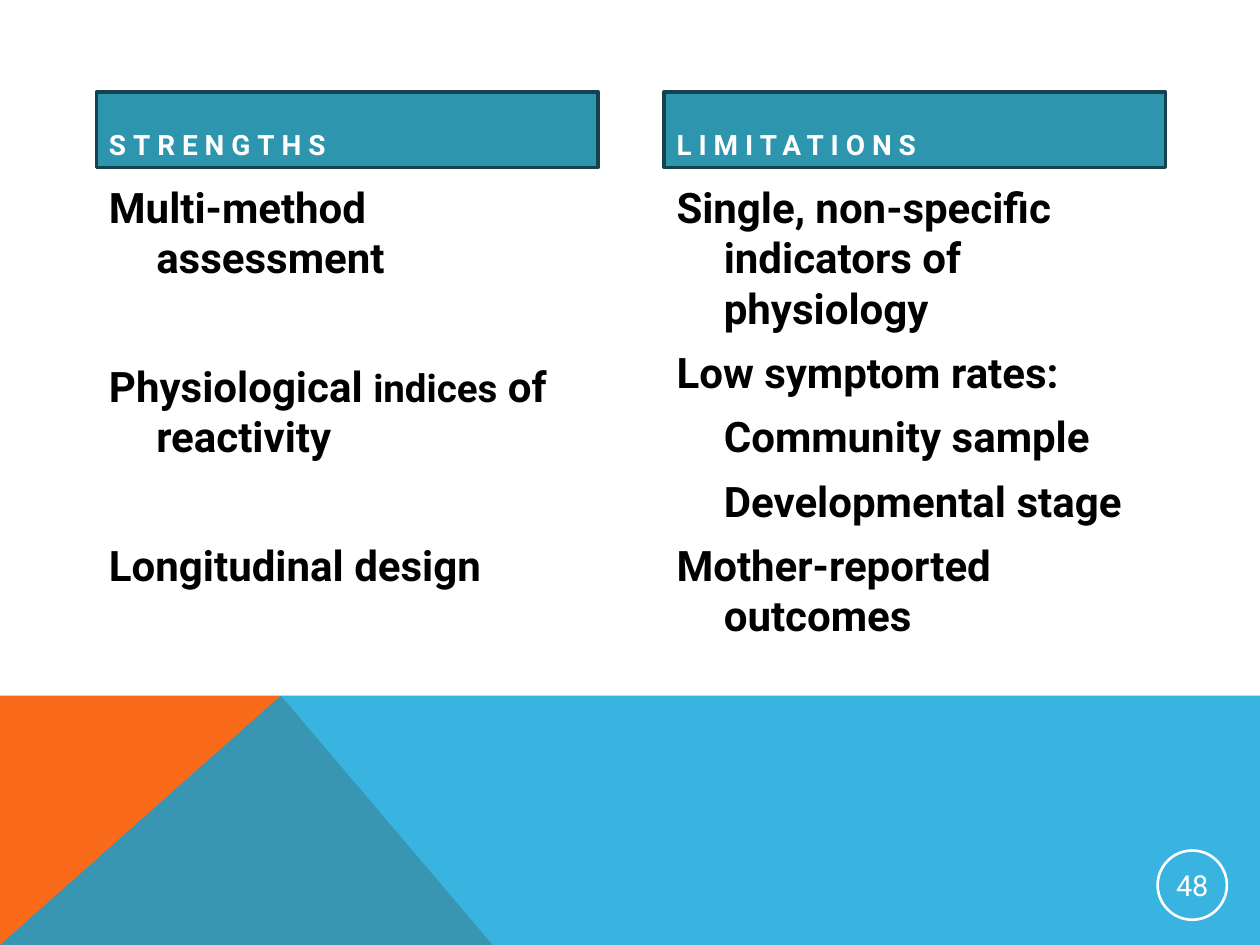
from pptx import Presentation
from pptx.dml import color
from pptx.enum import shapes, text
from pptx.oxml import ns
from pptx.util import Pt
from lxml import etree


def rgb(code):
    return color.RGBColor.from_string(code)


class Deck:
    font = "Roboto"
    white = "FFFFFF"
    black = "000000"
    indent = 27
    before = 8
    # Height of one blank line between two items, with its own spacing
    gap = 36.8

    def __init__(self, wide, high):
        self.prs = Presentation()
        self.prs.slide_width, self.prs.slide_height = Pt(wide), Pt(high)
        self.slide = self.prs.slides.add_slide(self.prs.slide_layouts[6])

    def style(self, para, size, tint, bold=False):
        font = para.font
        font.name, font.size, font.bold = self.font, Pt(size), bold
        font.color.rgb = rgb(tint)

    def area(self, points, fill, alpha=None):
        spots = [(Pt(x), Pt(y)) for x, y in points]
        build = self.slide.shapes.build_freeform(*spots[0], scale=1.0)
        build.add_line_segments(spots[1:], close=True)
        shape = build.convert_to_shape()
        shape.shadow.inherit = False
        shape.fill.solid()
        shape.fill.fore_color.rgb = rgb(fill)
        shape.line.fill.background()
        if alpha:
            tone = shape.fill._xPr.find(".//" + ns.qn("a:srgbClr"))
            etree.SubElement(tone, ns.qn("a:alpha")).set("val", str(alpha * 1000))

    def shape(self, kind, box, line, width, fill=None):
        shape = self.slide.shapes.add_shape(kind, *map(Pt, box))
        shape.shadow.inherit = False
        if fill:
            shape.fill.solid()
            shape.fill.fore_color.rgb = rgb(fill)
        else:
            shape.fill.background()
        shape.line.color.rgb = rgb(line)
        shape.line.width = Pt(width)
        return shape

    def header(self, box, title):
        shape = self.shape(shapes.MSO_SHAPE.RECTANGLE, box, "15424E", 2, "2D96AE")
        frame = shape.text_frame
        frame.vertical_anchor = text.MSO_ANCHOR.BOTTOM
        para = frame.paragraphs[0]
        para.alignment = text.PP_ALIGN.LEFT
        para.space_before = Pt(self.before)
        run = para.add_run()
        run.text = title
        run._r.get_or_add_rPr().set("spc", "400")
        self.style(para, 16, self.white, True)

    def items(self, box, rows):
        """Each row is (level, blank line above, list of (words, size))."""
        frame = self.slide.shapes.add_textbox(*map(Pt, box)).text_frame
        frame.word_wrap = True
        for i, (level, blank, runs) in enumerate(rows):
            para = frame.add_paragraph() if i else frame.paragraphs[0]
            para.space_before = Pt(self.before + blank * self.gap)
            props = para._p.get_or_add_pPr()
            props.set("marL", str(Pt(self.indent)))
            props.set("indent", str(Pt(self.indent * (level - 1))))
            self.style(para, 24, self.black, True)
            for words, size in runs:
                run = para.add_run()
                run.text = words
                if size:
                    run.font.size = Pt(size)

    def badge(self, box, label):
        shape = self.shape(shapes.MSO_SHAPE.OVAL, box, self.white, 1.5)
        frame = shape.text_frame
        frame.margin_left = frame.margin_right = Pt(1)
        frame.margin_top = frame.margin_bottom = Pt(1)
        frame.vertical_anchor = text.MSO_ANCHOR.MIDDLE
        para = frame.paragraphs[0]
        para.text = label
        para.alignment = text.PP_ALIGN.CENTER
        self.style(para, 16.5, self.white)


def main():
    wide, high = 720, 540
    deck = Deck(wide, high)

    # Coloured band at the foot
    top, peak = 397.5, 160.5
    deck.area([(0, high), (0, top), (peak, top), (281.5, high)], "F96A1B")
    deck.area([(0, high), (peak, top), (wide, top), (wide, high)], "08A1D9", 80)

    # Two columns: header and items
    good = [
        (0, 0, [("Multi-method assessment", None)]),
        (0, 1, [("Physiological ", None), ("indices", 22), (" of reactivity", None)]),
        (0, 1, [("Longitudinal design", None)]),
    ]
    limits = [
        (0, "Single, non-specific indicators of physiology"),
        (0, "Low symptom rates:"),
        (1, "Community sample"),
        (1, "Developmental stage"),
        (0, "Mother-reported outcomes"),
    ]
    weak = [(level, 0, [(words, None)]) for level, words in limits]
    for left, title, rows in ((55.2, "STRENGTHS", good), (379.5, "LIMITATIONS", weak)):
        deck.header((left, 52.5, 286.5, 43.2), title)
        deck.items((left, 100, 286.5, 245), rows)

    # Slide number
    deck.badge((661.5, 486, 39.6, 39.6), "48")

    deck.prs.save("out.pptx")


if __name__ == "__main__":
    main()
